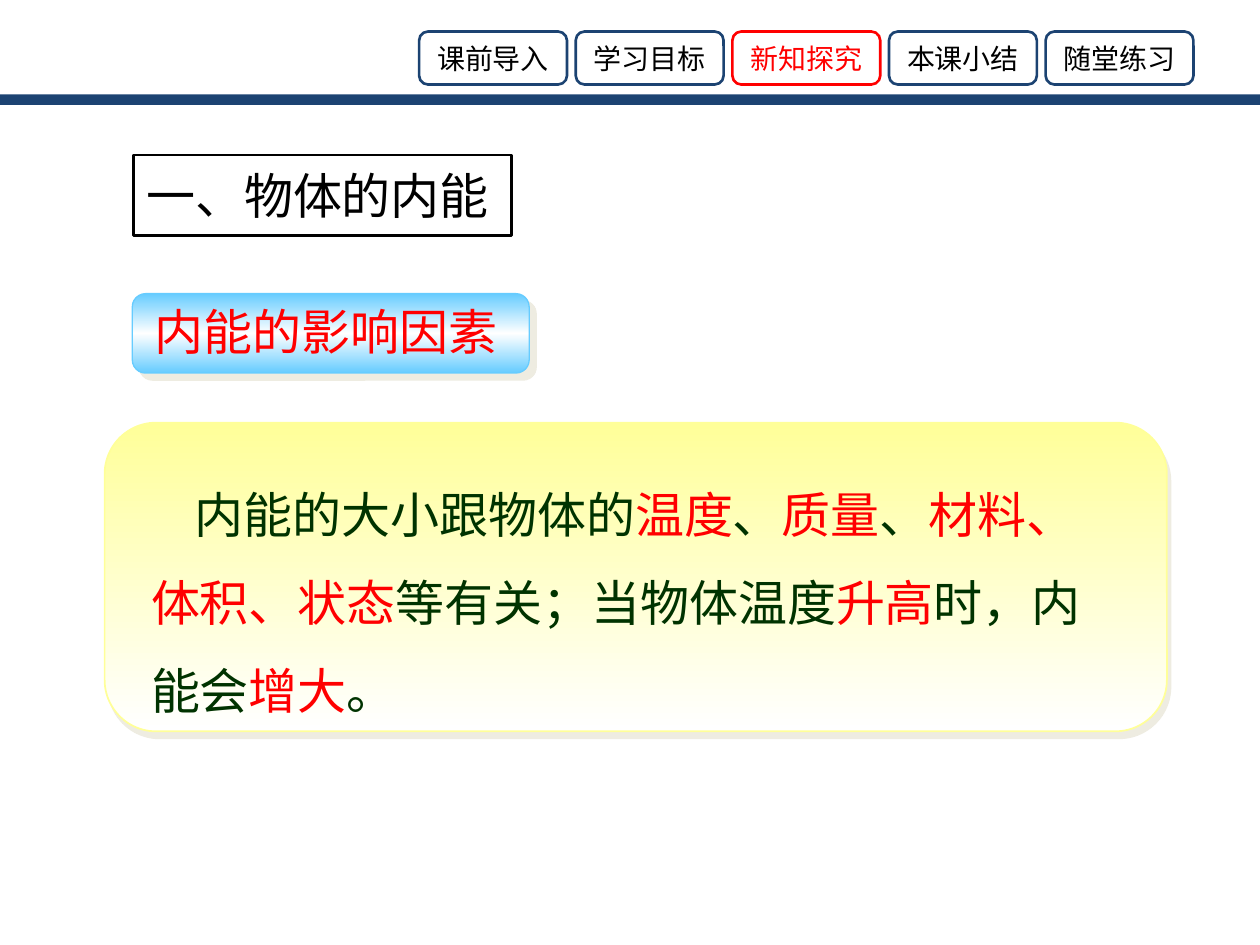
from lxml import etree
from pptx import Presentation
from pptx.dml.color import RGBColor
from pptx.enum import shapes, text
from pptx.oxml import parse_xml
from pptx.oxml.ns import nsdecls, qn
from pptx.util import Pt

NAVY = RGBColor(0x1C, 0x43, 0x72)
RED = RGBColor(0xFF, 0x00, 0x00)
BLACK = RGBColor(0x00, 0x00, 0x00)
GREEN = RGBColor(0x00, 0x33, 0x00)
YELLOW = RGBColor(0xFF, 0xFF, 0x99)
SKY = RGBColor(0x66, 0xCC, 0xFF)
WHITE = RGBColor(0xFF, 0xFF, 0xFF)
SHADOW = RGBColor(0xEE, 0xEC, 0xE1)
SANS = "Noto Sans CJK SC"
ROUND = shapes.MSO_SHAPE.ROUNDED_RECTANGLE


def write(box, spans, size, font=SANS, align=text.PP_ALIGN.LEFT):
    """Fill a box with one paragraph of (wording, colour) spans."""
    frame = box.text_frame
    frame.word_wrap = True
    frame.auto_size = text.MSO_AUTO_SIZE.NONE
    frame.vertical_anchor = text.MSO_ANCHOR.MIDDLE
    para = frame.paragraphs[0]
    para.alignment = align
    para.font.size = Pt(size)
    para.font.name = font
    if font == SANS:
        east_asian = etree.SubElement(para.font._element, qn("a:ea"))
        east_asian.set("typeface", font)
    for wording, colour in spans:
        span = para.add_run()
        span.text = wording
        span.font.color.rgb = colour
    return para


def add_panel(left, top, width, height, colours, border, distance, angle):
    """Rounded panel with a vertical gradient and a solid offset shadow."""
    panel = page.shapes.add_shape(ROUND, Pt(left), Pt(top), Pt(width), Pt(height))
    step = 100000 // (len(colours) - 1)
    stops = "".join(
        f'<a:gs pos="{i * step}"><a:srgbClr val="{colour}"/></a:gs>'
        for i, colour in enumerate(colours))
    properties = panel._element.spPr
    properties.append(parse_xml(
        f'<a:gradFill {nsdecls("a")} rotWithShape="1"><a:gsLst>{stops}</a:gsLst>'
        '<a:lin ang="5400000" scaled="1"/></a:gradFill>'))
    panel.line.color.rgb = colours[0]
    panel.line.width = Pt(border)
    properties.append(parse_xml(
        f'<a:effectLst {nsdecls("a")}><a:outerShdw dist="{Pt(distance)}" '
        f'dir="{angle * 60000}" algn="ctr" rotWithShape="0">'
        f'<a:srgbClr val="{SHADOW}"/></a:outerShdw></a:effectLst>'))


deck = Presentation()
deck.slide_width, deck.slide_height = Pt(720), Pt(540)
page = deck.slides.add_slide(deck.slide_layouts[5])

# Header rule
rule = page.shapes.add_shape(
    shapes.MSO_SHAPE.RECTANGLE, 0, Pt(54), Pt(720), Pt(6))
rule.shadow.inherit = False
rule.fill.solid()
rule.fill.fore_color.rgb = NAVY
rule.line.fill.background()

# Navigation tabs, the current one in red
ACTIVE = "新知探究"
for index, label in enumerate(["课前导入", "学习目标", ACTIVE, "本课小结", "随堂练习"]):
    tab = page.shapes.add_shape(
        ROUND, Pt(239.5 + 89.5 * index), Pt(18), Pt(84.5), Pt(30.3))
    tab.shadow.inherit = False
    tab.fill.background()
    tab.line.color.rgb = RED if label == ACTIVE else NAVY
    tab.line.width = Pt(1.5)
    tab.text_frame.margin_left = tab.text_frame.margin_right = Pt(3.6)
    write(tab, [(label, RED if label == ACTIVE else BLACK)], 16,
          align=text.PP_ALIGN.CENTER)

# Section title in an outlined rounded frame
title = page.shapes.title
title.left, title.top, title.width, title.height = Pt(76.4), Pt(88.5), Pt(215.8), Pt(46)
title._element.spPr.append(parse_xml(
    f'<a:prstGeom {nsdecls("a")} prst="roundRect"><a:avLst/></a:prstGeom>'))
title.line.color.rgb = BLACK
title.line.width = Pt(1.5)
write(title, [("一、物体的内能", BLACK)], 28, font="Times New Roman")

# Subheading
add_panel(75.6, 167.8, 226.8, 45.4, [SKY, WHITE, SKY], 0.75, 5.7, 45)
subheading = page.shapes.add_textbox(Pt(81.4), Pt(168.5), Pt(215), Pt(41))
write(subheading, [("内能的影响因素", RED)], 28)

# Explanation
add_panel(59.8, 241.5, 607, 176.4, [YELLOW, WHITE], 1, 4.5, 63)
explanation = page.shapes.add_textbox(Pt(79.2), Pt(256.5), Pt(567.4), Pt(152))
para = write(explanation, [
    ("内能的大小跟物体的", GREEN), ("温度", RED), ("、", GREEN), ("质量", RED),
    ("、", GREEN), ("材料、体积、状态", RED), ("等有关；当物体温度", GREEN),
    ("升高", RED), ("时，内能会", GREEN), ("增大", RED), ("。", GREEN)], 28)
explanation.text_frame.vertical_anchor = text.MSO_ANCHOR.TOP
para.line_spacing = Pt(50.4)
para._p.get_or_add_pPr().set("indent", str(Pt(25)))

deck.save("out.pptx")
